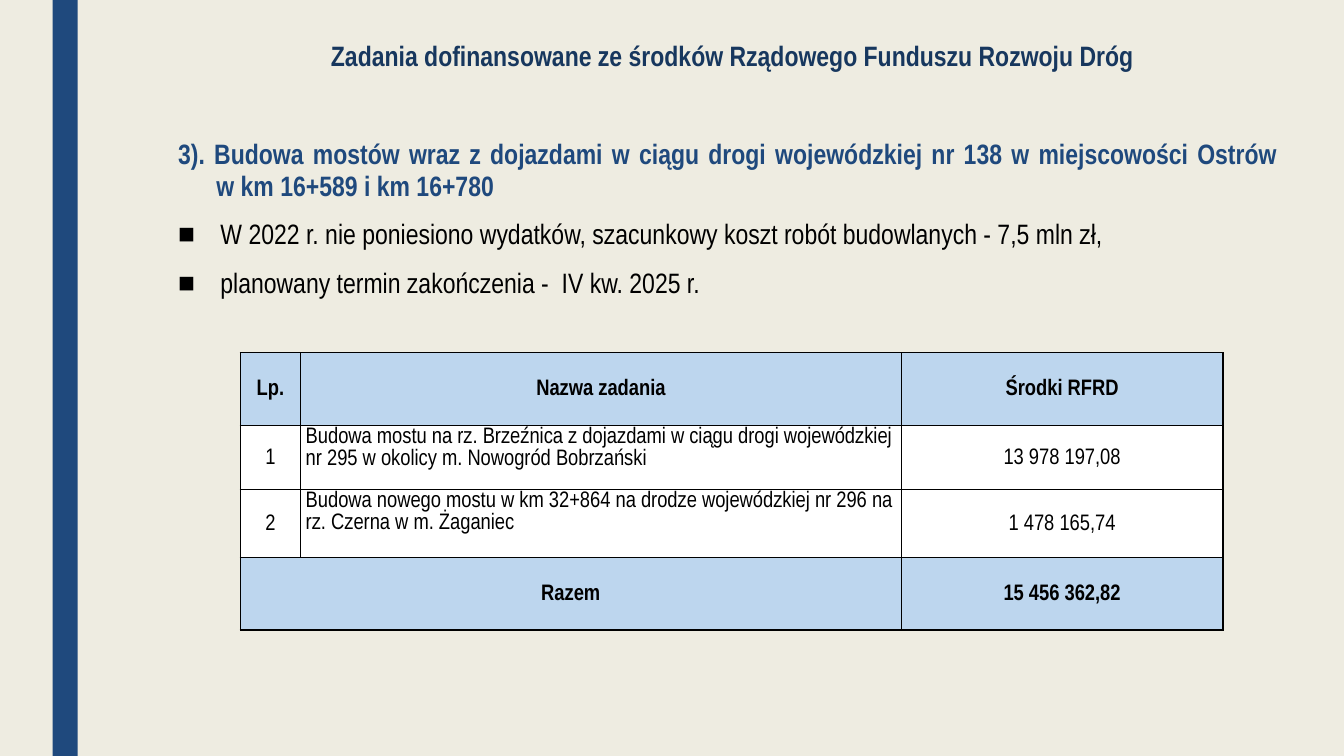
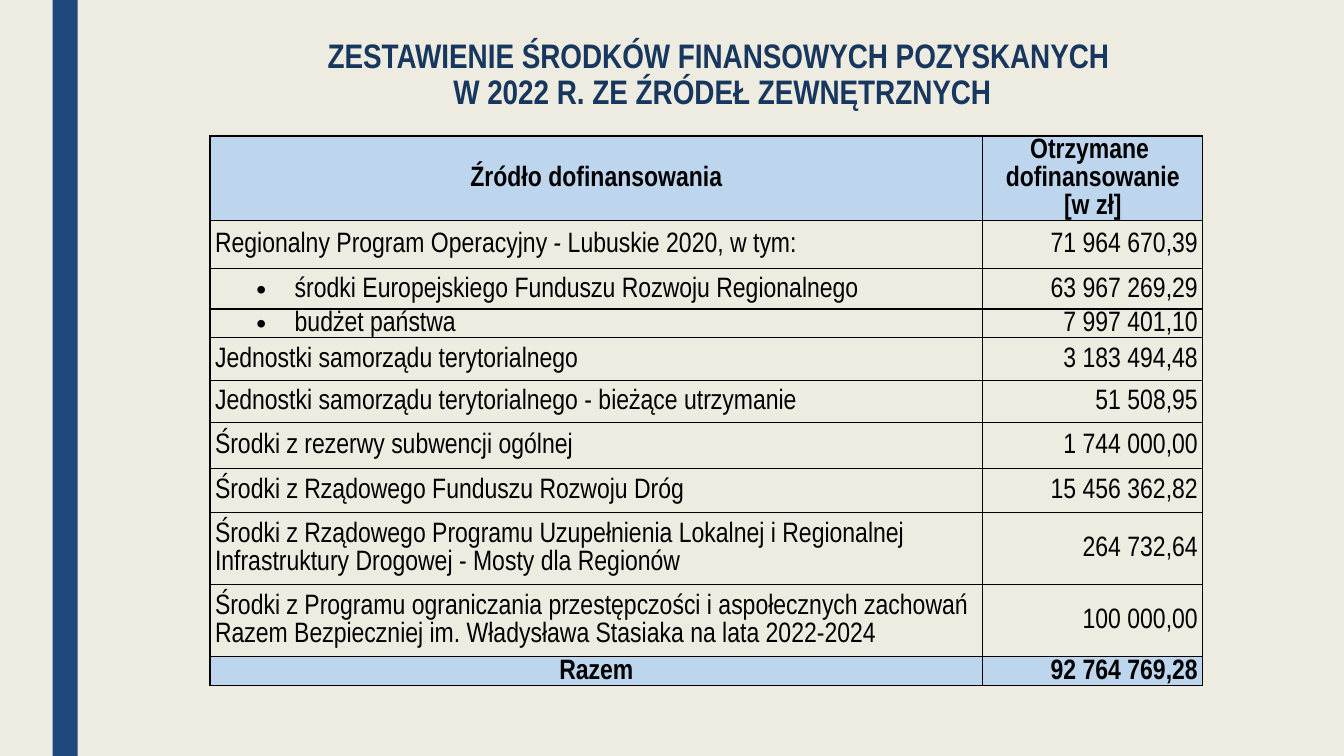
from lxml.etree import SubElement
from pptx import Presentation
from pptx.dml.color import RGBColor
from pptx.enum.shapes import MSO_SHAPE
from pptx.enum.text import MSO_ANCHOR, MSO_AUTO_SIZE, PP_ALIGN
from pptx.oxml import parse_xml
from pptx.oxml.ns import nsdecls, qn
from pptx.util import Inches, Pt

PAPER = RGBColor(0xEE, 0xEC, 0xE1)
BAND_BLUE = RGBColor(0x1F, 0x49, 0x7D)
TITLE_BLUE = RGBColor(0x17, 0x37, 0x5E)
HEADER_BLUE = RGBColor(0xBD, 0xD6, 0xEE)
WHITE = RGBColor(0xFF, 0xFF, 0xFF)
BLACK = RGBColor(0, 0, 0)
FONT = "Arial Narrow"

LEFT, CENTER, RIGHT = PP_ALIGN.LEFT, PP_ALIGN.CENTER, PP_ALIGN.RIGHT
TOP, MIDDLE = MSO_ANCHOR.TOP, MSO_ANCHOR.MIDDLE
GRID_COLUMNS, GRID_ROWS = 160, 90
TITLE_ONLY, TITLE_AND_BODY = 5, 1


class Deck:
    """Holds the shared style and the current slide; lengths are grid units."""

    def __init__(self):
        self.prs = Presentation()
        self.prs.slide_width, self.prs.slide_height = Inches(13.33), Inches(7.5)
        background = self.prs.slide_master.background.fill
        background.solid()
        background.fore_color.rgb = PAPER
        self.slide = None

    def x(self, columns):
        return round(self.prs.slide_width * columns / GRID_COLUMNS)

    def y(self, rows):
        return round(self.prs.slide_height * rows / GRID_ROWS)

    def box(self, left, top, width, height):
        return self.x(left), self.y(top), self.x(width), self.y(height)

    def new_slide(self, layout):
        self.slide = self.prs.slides.add_slide(self.prs.slide_layouts[layout])
        band = self.slide.shapes.add_shape(
            MSO_SHAPE.RECTANGLE, *self.box(6.25, 0, 3, GRID_ROWS))
        band.shadow.inherit = False
        band.fill.solid()
        band.fill.fore_color.rgb = BAND_BLUE
        band.line.fill.background()

    def place(self, placeholder, bounds):
        placeholder.left, placeholder.top, placeholder.width, placeholder.height = self.box(*bounds)
        frame = placeholder.text_frame
        frame.word_wrap = True
        frame.auto_size = MSO_AUTO_SIZE.NONE
        frame.vertical_anchor = TOP
        return frame

    def style(self, paragraph, size, color, bold, align, spacing):
        paragraph.alignment = align
        paragraph.line_spacing = spacing
        for run in paragraph.runs:
            font = run.font
            font.name, font.size, font.bold = FONT, Pt(size), bold
            font.color.rgb = color

    def indent(self, paragraph, margin, hanging, bullet=None):
        props = paragraph._p.get_or_add_pPr()
        props.set("marL", str(Inches(margin)))
        props.set("indent", str(-Inches(hanging)))
        if bullet:
            SubElement(props, qn("a:buFont")).set("typeface", "Arial")
            SubElement(props, qn("a:buChar")).set("char", bullet)
        else:
            SubElement(props, qn("a:buNone"))

    def title(self, text, size, bounds, spacing):
        frame = self.place(self.slide.shapes.title, bounds)
        frame.text = text
        self.style(frame.paragraphs[0], size, TITLE_BLUE, True, CENTER, spacing)

    def task(self, heading, points, bounds):
        frame = self.place(self.slide.placeholders[1], bounds)
        frame.text = "\n".join([heading, *points])
        for index, paragraph in enumerate(frame.paragraphs):
            if index == 0:
                self.indent(paragraph, 0.38, 0.38)
            else:
                self.indent(paragraph, 0.42, 0.42, "■")
            self.style(paragraph, 20, BLACK if index else BAND_BLUE, index == 0,
                       PP_ALIGN.JUSTIFY, 0.94)
            paragraph.space_before = Pt(10 if index else 0)
            paragraph.space_after = Pt(2)

    def borders(self, cell, hidden=()):
        props = cell._tc.get_or_add_tcPr()
        for index, side in enumerate("LRTB"):
            paint = ("<a:noFill/>" if side in hidden else
                     f'<a:solidFill><a:srgbClr val="{BLACK}"/></a:solidFill>')
            props.insert(index, parse_xml(
                f'<a:ln{side} {nsdecls("a")} w="{Pt(1)}">{paint}</a:ln{side}>'))

    def table(self, rows, corner, widths, heights, size, columns,
              header_rows=1, body_fill=None, bulleted=()):
        """columns: (alignment, anchor, total alignment) of each column."""
        table = self.slide.shapes.add_table(
            len(rows), len(widths),
            *self.box(*corner, sum(widths), sum(heights))).table
        table.first_row = table.horz_banding = False
        for column, width in zip(table.columns, widths):
            column.width = self.x(width)
        for row, height in zip(table.rows, heights):
            row.height = self.y(height)
        for r, texts in enumerate(rows):
            header, total = r < header_rows, r == len(rows) - 1
            strong = header or total
            for c, (align, anchor, total_align) in enumerate(columns):
                cell = table.cell(r, c)
                cell.text = texts[c]
                cell.margin_left = cell.margin_right = Inches(0.05)
                cell.margin_top = cell.margin_bottom = 0
                cell.vertical_anchor = MIDDLE if strong else anchor
                fill = HEADER_BLUE if strong else body_fill
                if fill is None:
                    cell.fill.background()
                else:
                    cell.fill.solid()
                    cell.fill.fore_color.rgb = fill
                # No rule between the rows of one header
                hidden = ("B" if r < header_rows - 1 else "") + ("T" if header and r else "")
                self.borders(cell, hidden)
                paragraph = cell.text_frame.paragraphs[0]
                if c == 0 and r in bulleted:
                    self.indent(paragraph, 0.79, 0.38, "•")
                self.style(paragraph, size, BLACK, strong,
                           CENTER if header else total_align if total else align, Pt(size))
        return table


def road_fund_slide(deck):
    deck.new_slide(TITLE_AND_BODY)
    deck.title("Zadania dofinansowane ze środków Rządowego Funduszu Rozwoju Dróg",
               20, (20, 4.3, 134.4, 7), 0.94)
    deck.task(
        "3). Budowa mostów wraz z dojazdami w ciągu drogi wojewódzkiej nr 138 "
        "w miejscowości Ostrów \vw km 16+589 i km 16+780",
        ["W 2022 r. nie poniesiono wydatków, szacunkowy koszt robót budowlanych - 7,5 mln zł,",
         "planowany termin zakończenia -  IV kw. 2025 r."],
        (20, 16, 134.4, 22))
    # Funded tasks
    tasks = deck.table(
        [("Lp.", "Nazwa zadania", "Środki RFRD"),
         ("1", "Budowa mostu na rz. Brzeźnica z dojazdami w ciągu drogi wojewódzkiej "
               "nr 295 w okolicy m. Nowogród Bobrzański", "13 978 197,08"),
         ("2", "Budowa nowego mostu w km 32+864 na drodze wojewódzkiej nr 296 "
               "na rz. Czerna w m. Żaganiec", "1 478 165,74"),
         ("Razem", "", "15 456 362,82")],
        (28.6, 42), (7.2, 71.5, 38.3), (8.7, 7.6, 8.1, 8.6), 16,
        [(CENTER, MIDDLE, CENTER), (LEFT, TOP, CENTER), (CENTER, MIDDLE, CENTER)],
        body_fill=WHITE)
    tasks.cell(3, 0).merge(tasks.cell(3, 1))


def external_funds_slide(deck):
    deck.new_slide(TITLE_ONLY)
    deck.title("ZESTAWIENIE ŚRODKÓW FINANSOWYCH POZYSKANYCH \v"
               "W 2022 R. ZE ŹRÓDEŁ ZEWNĘTRZNYCH",
               24.3, (19.5, 4.1, 133, 12), 0.89)
    # Funding sources
    sources = deck.table(
        [("Źródło dofinansowania", "Otrzymane \vdofinansowanie"),
         ("", "[w zł]"),
         ("Regionalny Program Operacyjny - Lubuskie 2020, w tym:", "71 964 670,39"),
         ("środki Europejskiego Funduszu Rozwoju Regionalnego", "63 967 269,29"),
         ("budżet państwa", "7 997 401,10"),
         ("Jednostki samorządu terytorialnego", "3 183 494,48"),
         ("Jednostki samorządu terytorialnego - bieżące utrzymanie", "51 508,95"),
         ("Środki z rezerwy subwencji ogólnej", "1 744 000,00"),
         ("Środki z Rządowego Funduszu Rozwoju Dróg", "15 456 362,82"),
         ("Środki z Rządowego Programu Uzupełnienia Lokalnej i Regionalnej "
          "Infrastruktury Drogowej - Mosty dla Regionów", "264 732,64"),
         ("Środki z Programu ograniczania przestępczości i aspołecznych zachowań "
          "Razem Bezpieczniej im. Władysława Stasiaka na lata 2022-2024", "100 000,00"),
         ("Razem", "92 764 769,28")],
        (25, 16.2), (92, 26.2),
        (6.7, 3.4, 5.7, 4.8, 3.4, 5.1, 5, 5.5, 5.2, 8.6, 8.6, 3.4), 20,
        [(LEFT, MIDDLE, CENTER), (RIGHT, MIDDLE, RIGHT)],
        header_rows=2, bulleted=(3, 4))
    sources.cell(0, 0).merge(sources.cell(1, 0))


def main():
    deck = Deck()
    road_fund_slide(deck)
    external_funds_slide(deck)
    deck.prs.save("out.pptx")


if __name__ == "__main__":
    main()
